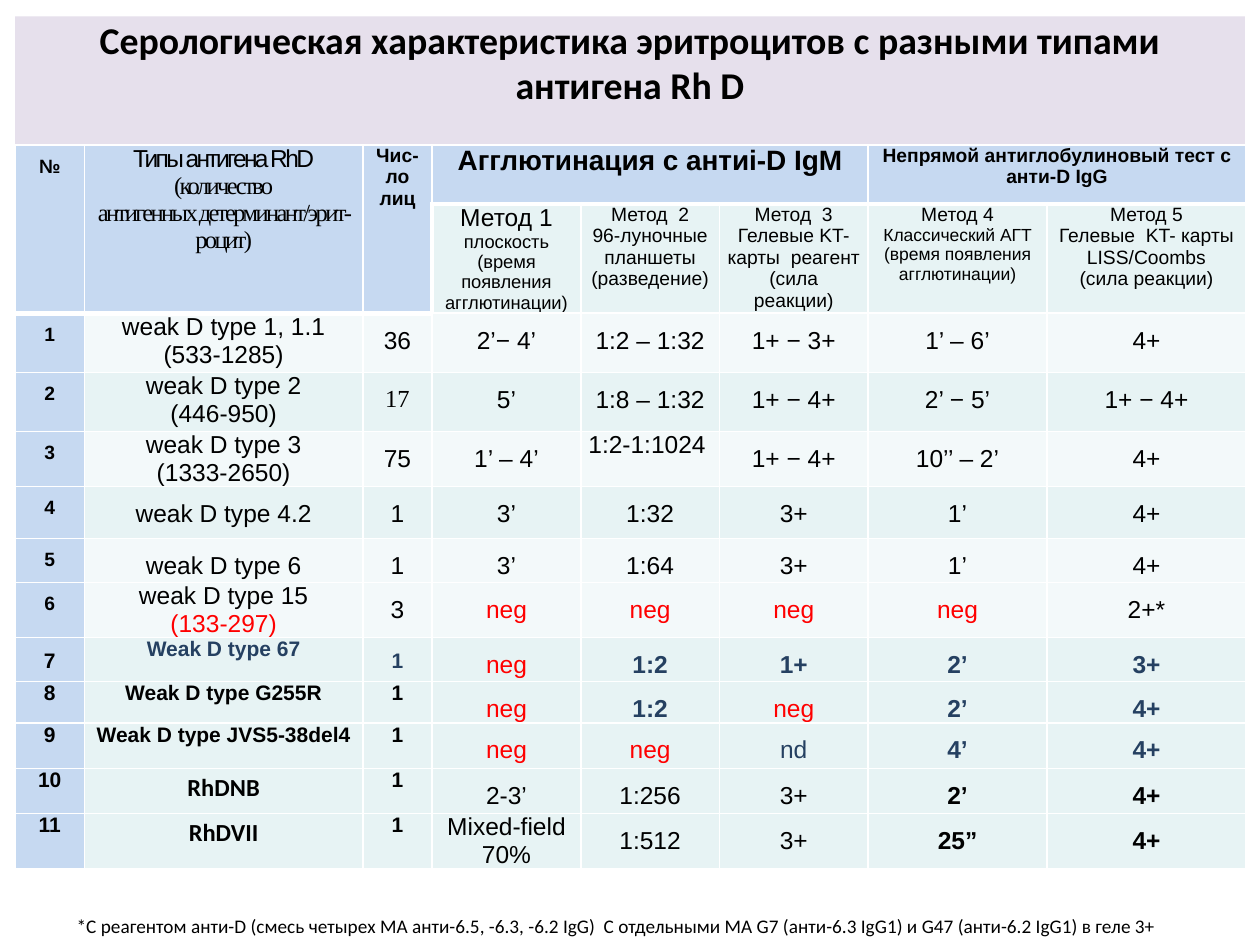
from lxml import etree
from pptx import Presentation
from pptx import util as u
from pptx.dml.color import RGBColor
from pptx.enum import text as t
from pptx.oxml import ns

BLACK = RGBColor(0x00, 0x00, 0x00)
RED = RGBColor(0xFF, 0x00, 0x00)
NAVY = RGBColor(0x25, 0x40, 0x61)
WHITE = RGBColor(0xFF, 0xFF, 0xFF)
LILAC = RGBColor(0xE6, 0xE0, 0xEC)
BLUE = RGBColor(0xC6, 0xD9, 0xF1)
PALE = RGBColor(0xF3, 0xF9, 0xFA)
MINT = RGBColor(0xE7, 0xF3, 0xF4)

TITLE = "Серологическая характеристика эритроцитов с разными типами антигена Rh D"
FOOTNOTE = ("*С реагентом анти-D (смесь четырех МА анти-6.5, -6.3, -6.2 IgG)  "
            "С отдельными МА G7 (анти-6.3 IgG1) и G47 (анти-6.2 IgG1) в геле 3+")

LEFT, TABLE_TOP, WIDTH = 0.12, 1.15, 9.76
COLUMN_WIDTHS = [0.55, 2.21, 0.55, 1.18, 1.1, 1.18, 1.42, 1.58]
ROW_HEIGHTS = [0.47, 0.75, 0.47, 0.47, 0.39, 0.41, 0.35, 0.35, 0.35, 0.31, 0.36, 0.36, 0.36]

BASE = {"name": "Arial", "size": 14, "bold": False, "color": BLACK}
BOLD_11 = {"size": 11, "bold": True}
BOLD_12 = {"size": 12, "bold": True}
SERIF = {"name": "Times New Roman", "tracking": -150}
TALL = {"spacing": 1.5}
SINGLE = {"spacing": 1.0}
CALIBRI = {"name": "Calibri", "bold": True, "spacing": 1.15, "margin": 0.07}

HEADINGS = [
    (0, 0, 1, 0, [("№", BOLD_11 | TALL)]),
    (0, 1, 1, 1, [("Типы антигена RhD", {"tracking": -150}), ("(количество", SERIF),
                  ("антигенных детерминант/эрит-роцит)", SERIF)]),
    (0, 2, 1, 2, [("Чис-ло", BOLD_11), ("лиц", BOLD_11)]),
    (0, 3, 0, 5, [("Агглютинация с антиi-D IgM", {"size": 16, "bold": True})]),
    (0, 6, 0, 7, [("Непрямой антиглобулиновый тест с анти-D IgG", BOLD_11)]),
]
METHODS = [
    [("Метод 1", 14), ("плоскость", 10.5), ("(время появления агглютинации)", 10.5)],
    [("Метод  2", 11), ("96-луночные планшеты", 11), ("(разведение)", 11)],
    [("Метод  3", 11), ("Гелевые KT- карты  реагент (сила реакции)", 11)],
    [("Метод 4", 11), ("Классический АГТ", 10), ("(время появления агглютинации)", 10)],
    [("Метод 5", 11), ("Гелевые  KT- карты LISS/Coombs", 11), ("(сила реакции)", 11)],
]
SAMPLES = [
    ["1", "weak D type 1, 1.1\n(533-1285)", "36", "2’− 4’", "1:2 – 1:32", "1+ − 3+", "1’ – 6’", "4+"],
    ["2", "weak D type 2\n(446-950)", "17", "5’", "1:8 – 1:32", "1+ − 4+", "2’ − 5’", "1+ − 4+"],
    ["3", "weak D type 3\n(1333-2650)", "75", "1’ – 4’", "1:2-1:1024", "1+ − 4+", "10’’ – 2’", "4+"],
    ["4", "weak D type 4.2", "1", "3’", "1:32", "3+", "1’", "4+"],
    ["5", "weak D type 6", "1", "3’", "1:64", "3+", "1’", "4+"],
    ["6", "weak D type 15\n(133-297)", "3", "neg", "neg", "neg", "neg", "2+*"],
    ["7", "Weak D type 67", "1", "neg", "1:2", "1+", "2’", "3+"],
    ["8", "Weak D type G255R", "1", "neg", "1:2", "neg", "2’", "4+"],
    ["9", "Weak D type JVS5-38del4", "1", "neg", "neg", "nd", "4’", "4+"],
    ["10", "RhDNB", "1", "2-3’", "1:256", "3+", "2’", "4+"],
    ["11", "RhDVII", "1", "Mixed-field 70%", "1:512", "3+", "25”", "4+"],
]
EXCEPTIONS = {
    "17": {"name": "Times New Roman"},
    "1:2-1:1024": SINGLE | {"align": t.PP_ALIGN.JUSTIFY},
    "Mixed-field 70%": SINGLE,
    "(133-297)": {"color": RED},
    "neg": {"color": RED, "bold": False},
    "nd": {"bold": False},
}


def sample_format(number, column, value):
    if column == 0:
        look = (BOLD_11 if number < 7 else BOLD_12) | (TALL if number < 8 else SINGLE)
    elif column == 1 and number > 9:
        look = CALIBRI
    elif column < 3 and number > 6:
        look = BOLD_12 | (TALL if column == 2 and number == 7 else SINGLE)
    else:
        look = SINGLE if "\n" in value else TALL
    if column > 2 and (number in (7, 8, 9) or number > 9 and column > 5):
        look = look | {"bold": True}
    if number in (7, 8, 9) and column > 2 or number == 7 and column > 0:
        look = look | {"color": NAVY}
    return look


def write(frame, lines):
    frame.word_wrap = True
    for index, (line, look) in enumerate(lines):
        look = BASE | look
        paragraph = frame.paragraphs[0] if index == 0 else frame.add_paragraph()
        paragraph.alignment = look.get("align", t.PP_ALIGN.CENTER)
        paragraph.line_spacing = look.get("spacing", 1.0)
        run = paragraph.add_run()
        run.text = line
        for key in ("name", "bold"):
            setattr(run.font, key, look[key])
        run.font.size = u.Pt(look["size"])
        run.font.color.rgb = look["color"]
        if "tracking" in look:
            run.font._element.set("spc", str(look["tracking"]))


def draw_borders(cell, thick):
    properties = cell._tc.get_or_add_tcPr()
    for side in "LRTB":
        width = u.Pt(3 if side in thick else 1)
        line = etree.SubElement(properties, ns.qn(f"a:ln{side}"), w=str(width))
        fill = etree.SubElement(line, ns.qn("a:solidFill"))
        etree.SubElement(fill, ns.qn("a:srgbClr"), val=str(WHITE))


def thick_sides(row, column):
    if row == 0:
        return "B"
    if row == 1:
        return "B" if column < 3 else "LT" if column == 3 else "T"
    return "T" if row == 2 and column < 3 else ""


def cell_fill(row, column):
    if row == 0 or column == 0 or row == 1 and column < 3:
        return BLUE
    return PALE if row in (2, 4, 6, 7) else MINT


def fill_table(table):
    table.first_row = table.horz_banding = False
    for column, width in zip(table.columns, COLUMN_WIDTHS):
        column.width = u.Inches(width)
    for row, height in zip(table.rows, ROW_HEIGHTS):
        row.height = u.Inches(height)
    for row in range(len(ROW_HEIGHTS)):
        for column in range(len(COLUMN_WIDTHS)):
            cell = table.cell(row, column)
            draw_borders(cell, thick_sides(row, column))
            cell.fill.solid()
            cell.fill.fore_color.rgb = cell_fill(row, column)
            cell.margin_left = cell.margin_right = u.Inches(0.06)
            cell.margin_top = cell.margin_bottom = 0
    for top, left, bottom, right, lines in HEADINGS:
        table.cell(top, left).merge(table.cell(bottom, right))
        write(table.cell(top, left).text_frame, lines)
    for column, method in enumerate(METHODS, 3):
        write(table.cell(1, column).text_frame, [(line, {"size": size}) for line, size in method])
    for number, sample in enumerate(SAMPLES, 1):
        for column, value in enumerate(sample):
            cell = table.cell(number + 1, column)
            look = sample_format(number, column, value)
            if "margin" in look:
                cell.margin_left = cell.margin_right = u.Inches(look["margin"])
            exceptions = EXCEPTIONS if column else {}
            write(cell.text_frame,
                  [(line, look | exceptions.get(line, {})) for line in value.split("\n")])


def main():
    deck = Presentation()
    deck.slide_width, deck.slide_height = u.Inches(10), u.Inches(7.5)
    slide = deck.slides.add_slide(deck.slide_layouts[5])

    title = slide.shapes.title
    place = {"left": LEFT, "top": 0.13, "width": WIDTH, "height": 1.02}
    for side, length in place.items():
        setattr(title, side, u.Inches(length))
    title.fill.solid()
    title.fill.fore_color.rgb = LILAC
    frame_format = {"auto_size": t.MSO_AUTO_SIZE.NONE, "margin_top": 0,
                    "vertical_anchor": t.MSO_ANCHOR.TOP}
    for key, value in frame_format.items():
        setattr(title.text_frame, key, value)
    write(title.text_frame, [(TITLE, {"name": "Calibri", "size": 21.6, "bold": True})])

    grid = slide.shapes.add_table(len(ROW_HEIGHTS), len(COLUMN_WIDTHS), u.Inches(LEFT),
                                  u.Inches(TABLE_TOP), u.Inches(WIDTH), u.Inches(5.93))
    fill_table(grid.table)

    footnote = slide.shapes.add_textbox(u.Inches(0.51), u.Inches(7.21),
                                        u.Inches(9.21), u.Inches(0.29))
    write(footnote.text_frame,
          [(FOOTNOTE, {"name": "Calibri", "size": 11, "align": t.PP_ALIGN.JUSTIFY})])
    deck.save("out.pptx")


if __name__ == "__main__":
    main()
